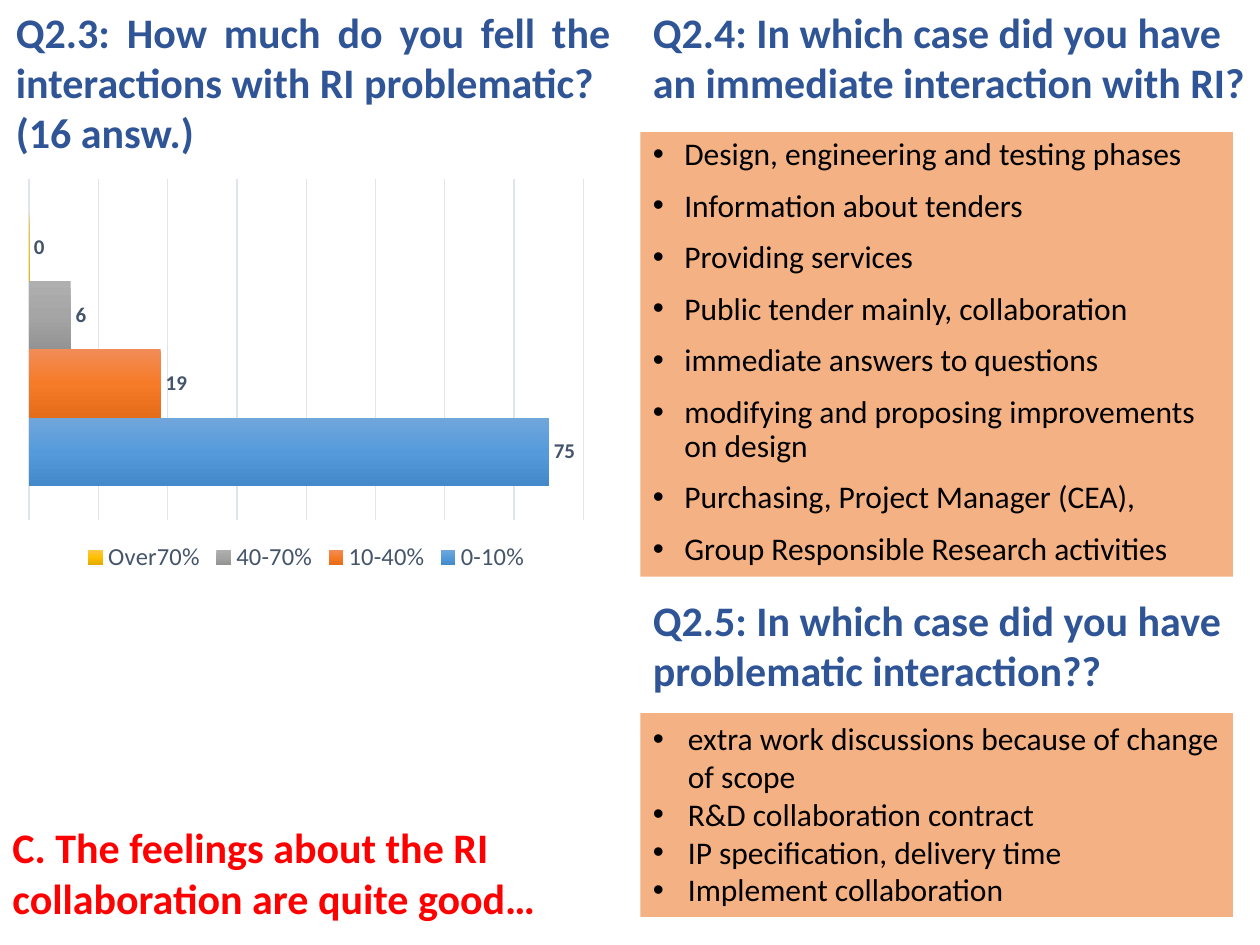
from copy import deepcopy

from pptx import Presentation
from pptx.chart import data as chart_data
from pptx.dml.color import RGBColor
from pptx.enum import chart as chart_enum, shapes, text
from pptx.oxml import ns, xmlchemy
from pptx.util import Pt

FONT = "Calibri"
COLORS = {
    "heading": "2F5597",
    "conclusion": "FF0000",
    "panel": "F4B183",
    "body": "000000",
    "chart_text": "44546A",
    "grid": "E0E5EB",
}
RIGHT_COLUMN = 366

# Series name, percentage of answers, gradient from top to bottom
ANSWERS = [
    ("0-10%", 75, ("71A6DB", "559BDB", "448ACA")),
    ("10-40%", 19, ("F18C57", "F67B28", "E56C19")),
    ("40-70%", 6, ("AFAFAF", "A5A5A5", "939393")),
    ("Over70%", 0, ("FFC64B", "FFC000", "E3AB00")),
]
IMMEDIATE_CASES = [
    "Design, engineering and testing phases",
    "Information about tenders",
    "Providing services",
    "Public tender mainly, collaboration",
    "immediate answers to questions",
    "modifying and proposing improvements on design",
    "Purchasing, Project Manager (CEA),",
    "Group Responsible Research activities",
]
PROBLEMATIC_CASES = [
    "extra work discussions because of change of scope",
    "R&D collaboration contract",
    "IP specification, delivery time",
    "Implement collaboration",
]


def rgb(name):
    return RGBColor.from_string(COLORS.get(name, name))


def style_font(font, size, color, bold=False):
    font.name = FONT
    font.size = Pt(size)
    font.bold = bold
    font.color.rgb = rgb(color)


def add_heading(slide, box, content, color="heading", alignment=text.PP_ALIGN.LEFT):
    shape = slide.shapes.add_textbox(*map(Pt, box))
    shape.text_frame.word_wrap = True
    shape.text_frame.text = content
    for paragraph in shape.text_frame.paragraphs:
        paragraph.alignment = alignment
        for run in paragraph.runs:
            style_font(run.font, 24, color, bold=True)


def add_bullet(paragraph, indent):
    properties = paragraph._p.get_or_add_pPr()
    properties.set("marL", str(Pt(indent)))
    properties.set("indent", str(-Pt(indent)))
    for tag, key, value in (("a:buFont", "typeface", "Arial"), ("a:buChar", "char", "•")):
        element = xmlchemy.OxmlElement(tag)
        element.set(key, value)
        properties.append(element)


def add_bullet_panel(slide, box, items, indent, line_spacing=1.0, space_before=0):
    shape = slide.shapes.add_shape(shapes.MSO_SHAPE.RECTANGLE, *map(Pt, box))
    shape.shadow.inherit = False
    shape.fill.solid()
    shape.fill.fore_color.rgb = rgb("panel")
    shape.line.fill.background()
    frame = shape.text_frame
    frame.word_wrap = True
    frame.vertical_anchor = text.MSO_ANCHOR.TOP
    frame.text = "\n".join(items)
    for index, paragraph in enumerate(frame.paragraphs):
        add_bullet(paragraph, indent)
        paragraph.alignment = text.PP_ALIGN.LEFT
        paragraph.line_spacing = line_spacing
        paragraph.space_before = Pt(space_before if index else 0)
        for run in paragraph.runs:
            style_font(run.font, 18, "body")


def fill_gradient(series, colors):
    fill = series.format.fill
    fill.gradient()
    fill.gradient_angle = 270
    # The default gradient has two stops; a third is needed
    stop_list = series._element.find(".//" + ns.qn("a:gsLst"))
    stop_list.append(deepcopy(stop_list[-1]))
    for stop, color, position in zip(fill.gradient_stops, colors, (0, 0.5, 1)):
        stop.color.rgb = rgb(color)
        stop.position = position


def add_answer_chart(slide, box):
    data = chart_data.CategoryChartData(number_format="0")
    data.categories = ["1"]
    for name, value, _ in ANSWERS:
        data.add_series(name, [value])
    chart = slide.shapes.add_chart(
        chart_enum.XL_CHART_TYPE.BAR_CLUSTERED, *map(Pt, box), data
    ).chart
    style_font(chart.font, 10, "body")
    chart.has_title = False

    # Axes: only the vertical grid lines show
    chart.category_axis.visible = False
    axis = chart.value_axis
    axis.visible = False
    axis.minimum_scale, axis.maximum_scale, axis.major_unit = 0, 80, 10
    axis.has_major_gridlines = True
    axis.major_gridlines.format.line.color.rgb = rgb("grid")
    axis.major_gridlines.format.line.width = Pt(0.75)

    chart.has_legend = True
    chart.legend.position = chart_enum.XL_LEGEND_POSITION.BOTTOM
    chart.legend.include_in_layout = False
    style_font(chart.legend.font, 14, "chart_text")

    # Bars and their values
    plot = chart.plots[0]
    plot.gap_width = 100
    plot.overlap = 0
    plot.vary_by_categories = False
    for series, (_, _, colors) in zip(plot.series, ANSWERS):
        fill_gradient(series, colors)
        labels = series.data_labels
        labels.show_value = True
        labels.number_format = "0"
        labels.number_format_is_linked = False
        labels.position = chart_enum.XL_LABEL_POSITION.OUTSIDE_END
        style_font(labels.font, 12, "chart_text", bold=True)


def main():
    presentation = Presentation()
    presentation.slide_width, presentation.slide_height = Pt(720), Pt(540)
    slide = presentation.slides.add_slide(presentation.slide_layouts[6])

    # Left column: question with chart, then the conclusion
    add_heading(
        slide,
        (2, 0, 354, 94),
        "Q2.3: How much do you fell the interactions with RI problematic?\n(16 answ.)",
        alignment=text.PP_ALIGN.JUSTIFY,
    )
    add_answer_chart(slide, (10, 97.5, 330, 232.5))
    add_heading(
        slide,
        (0, 466, 350, 65.5),
        "C. The feelings about the RI collaboration are quite good…",
        color="conclusion",
    )

    # Right column: two questions, each with its list of answers
    add_heading(
        slide,
        (RIGHT_COLUMN, 0, 354, 65.5),
        "Q2.4: In which case did you have an immediate interaction with RI?",
    )
    add_bullet_panel(
        slide, (RIGHT_COLUMN, 75.5, 338.5, 254), IMMEDIATE_CASES,
        indent=18, line_spacing=0.9, space_before=10,
    )
    add_heading(
        slide,
        (RIGHT_COLUMN, 336, 354, 65.5),
        "Q2.5: In which case did you have problematic interaction??",
    )
    add_bullet_panel(
        slide, (RIGHT_COLUMN, 407.5, 338.5, 116.5), PROBLEMATIC_CASES, indent=20
    )

    presentation.save("out.pptx")


if __name__ == "__main__":
    main()
